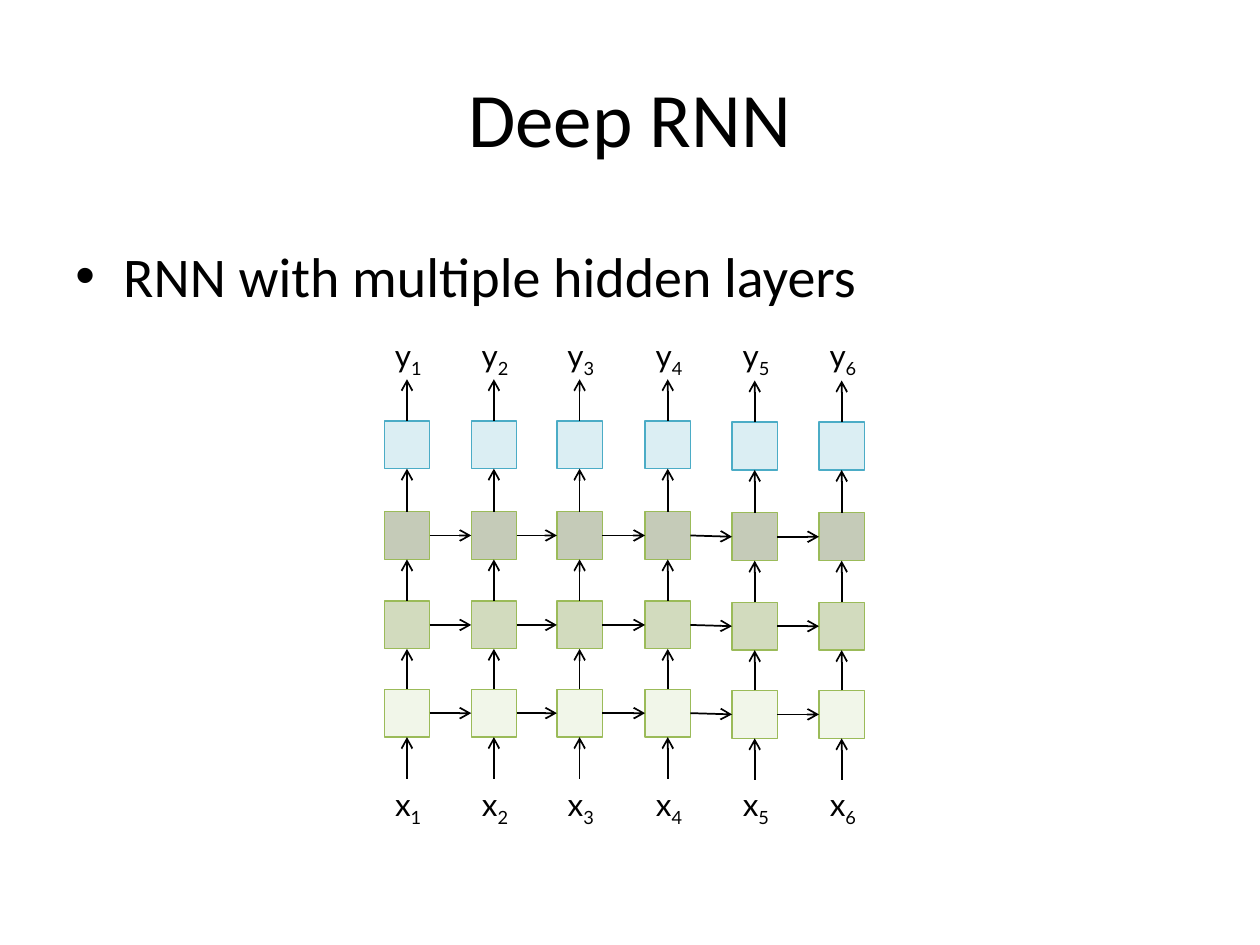
from lxml.etree import SubElement
from pptx import Presentation
from pptx.dml.color import RGBColor
from pptx.enum.shapes import MSO_CONNECTOR, MSO_SHAPE
from pptx.enum.text import MSO_ANCHOR, PP_ALIGN
from pptx.oxml.ns import qn
from pptx.util import Inches, Pt

COLUMN_OFFSETS = [0, 0.69, 1.37, 2.07, 2.76, 3.45]
COLUMN_DROPS = [0, 0, 0, 0, 0.01, 0.01]
LAYERS = [
    (3.34, "93CDDD", "4BACC6"),
    (4.06, "4F6228", "9BBB59"),
    (4.77, "77933C", "9BBB59"),
    (5.47, "D7E4BD", "9BBB59"),
]
GRID_LEFT = 3.05
CELL_WIDTH, CELL_HEIGHT = 0.36, 0.38
LABEL_WIDTH, LABEL_HEIGHT = 0.44, 0.4
ARROW_LENGTH = 0.33
TOP, LEFT, BOTTOM, RIGHT = range(4)


def color(hex_value):
    return RGBColor.from_string(hex_value)


def add_text(slide, text, left, top, width, height, size=18, font="Calibri",
             align=PP_ALIGN.LEFT, anchor=MSO_ANCHOR.TOP, wrap=True,
             bullet=False, subscript=""):
    frame = slide.shapes.add_textbox(
        Inches(left), Inches(top), Inches(width), Inches(height)).text_frame
    frame.word_wrap = wrap
    frame.vertical_anchor = anchor
    paragraph = frame.paragraphs[0]
    paragraph.alignment = align
    if bullet:
        properties = paragraph._p.get_or_add_pPr()
        properties.set("marL", str(Inches(0.38)))
        properties.set("indent", str(Inches(-0.38)))
        SubElement(properties, qn("a:buFont"), typeface="Arial")
        SubElement(properties, qn("a:buChar"), char="•")
    for part in filter(None, (text, subscript)):
        run = paragraph.add_run()
        run.text = part
        run.font.size = Pt(size)
        run.font.name = font
        run.font.color.rgb = color("000000")
    if subscript:
        run._r.get_or_add_rPr().set("baseline", "-25000")


def add_cell(slide, left, top, fill, outline):
    cell = slide.shapes.add_shape(
        MSO_SHAPE.RECTANGLE, Inches(left), Inches(top),
        Inches(CELL_WIDTH), Inches(CELL_HEIGHT))
    cell.shadow.inherit = False
    cell.fill.solid()
    cell.fill.fore_color.rgb = color(fill)
    fill_color = cell._element.spPr.find(qn("a:solidFill")).find(qn("a:srgbClr"))
    SubElement(fill_color, qn("a:alpha"), val="33000")
    cell.line.color.rgb = color(outline)
    cell.line.width = Pt(0.75)
    return cell


def add_arrow(slide, start=(0, 0), end=(0, 0), source=None, target=None):
    arrow = slide.shapes.add_connector(
        MSO_CONNECTOR.STRAIGHT, *map(Inches, start + end))
    if source:
        arrow.begin_connect(*source)
    if target:
        arrow.end_connect(*target)
    arrow.line.color.rgb = color("000000")
    arrow.line.width = Pt(1)
    properties = arrow._element.spPr
    SubElement(properties.find(qn("a:ln")), qn("a:tailEnd"), type="arrow")
    SubElement(properties, qn("a:effectLst"))


def add_label(slide, letter, step, center, top):
    add_text(slide, letter, center - LABEL_WIDTH / 2 + 0.01, top,
             LABEL_WIDTH, LABEL_HEIGHT, font="Lato", align=PP_ALIGN.CENTER,
             wrap=False, subscript=str(step))


def add_time_step(slide, step, offset, drop):
    left = GRID_LEFT + offset
    center = left + CELL_WIDTH / 2
    cells = [add_cell(slide, left, top + drop, fill, outline)
             for top, fill, outline in LAYERS]
    for upper, lower in zip(cells, cells[1:]):
        add_arrow(slide, source=(lower, TOP), target=(upper, BOTTOM))

    output_top = LAYERS[0][0] + drop
    add_arrow(slide, end=(center, output_top - ARROW_LENGTH),
              source=(cells[0], TOP))
    input_bottom = LAYERS[-1][0] + drop + CELL_HEIGHT
    add_arrow(slide, start=(center, input_bottom + ARROW_LENGTH),
              target=(cells[-1], BOTTOM))

    add_label(slide, "y", step, center, 2.62)
    add_label(slide, "x", step, center, 6.18)
    return cells


def add_network(slide):
    steps = [add_time_step(slide, step, offset, drop)
             for step, (offset, drop) in enumerate(
                 zip(COLUMN_OFFSETS, COLUMN_DROPS), start=1)]
    for earlier, later in zip(steps, steps[1:]):
        for source, target in zip(earlier[1:], later[1:]):
            add_arrow(slide, source=(source, RIGHT), target=(target, LEFT))


def main():
    deck = Presentation()
    deck.slide_width, deck.slide_height = Inches(10), Inches(7.5)
    slide = deck.slides.add_slide(deck.slide_layouts[6])
    add_text(slide, "Deep RNN", 0.5, 0.3, 9, 1.25, size=44,
             align=PP_ALIGN.CENTER, anchor=MSO_ANCHOR.MIDDLE)
    add_text(slide, "RNN with multiple hidden layers", 0.5, 1.87, 8.17, 5.21,
             size=32, bullet=True)
    add_network(slide)
    deck.save("out.pptx")


if __name__ == "__main__":
    main()
